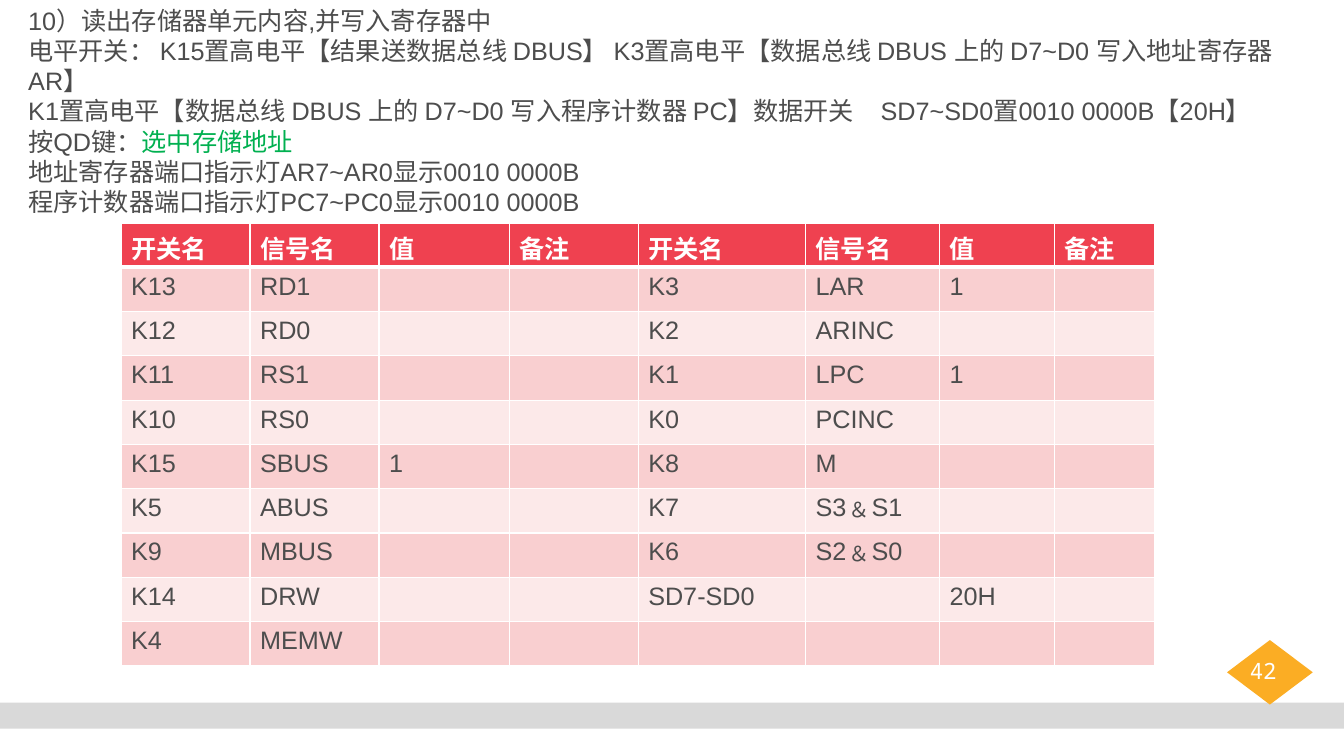
from dataclasses import dataclass
from typing import NamedTuple

from lxml import etree
from pptx import Presentation
from pptx.dml.color import RGBColor
from pptx.enum import shapes, text
from pptx.oxml import ns
from pptx.util import Inches, Pt


@dataclass(frozen=True)
class Theme:
    ink: RGBColor = RGBColor(0x4D, 0x4D, 0x4D)
    white: RGBColor = RGBColor(0xFF, 0xFF, 0xFF)
    green: RGBColor = RGBColor(0x00, 0xB0, 0x50)
    header: RGBColor = RGBColor(0xEF, 0x41, 0x50)
    band_dark: RGBColor = RGBColor(0xF9, 0xCF, 0xD0)
    band_light: RGBColor = RGBColor(0xFC, 0xE9, 0xE9)
    bar: RGBColor = RGBColor(0xD9, 0xD9, 0xD9)
    badge: RGBColor = RGBColor(0xFB, 0xAD, 0x24)
    font: str = "Arial"
    number_font: str = "Noto Sans Mono"
    text_size: int = 18
    number_size: int = 16


THEME = Theme()


class Span(NamedTuple):
    words: str
    color: RGBColor = THEME.ink
    spacing: int = 0  # extra points after each letter


class Area(NamedTuple):
    left: float
    top: float
    width: float
    height: float

    def lengths(self) -> list:
        return [Inches(value) for value in self]


class Decoration(NamedTuple):
    kind: shapes.MSO_SHAPE
    area: Area
    color: RGBColor


STEPS = [
    [Span("10）读出存储器单元内容,并写入寄存器中")],
    [Span("电平开关： K15置高电平【结果送数据总线 DBUS】 K3置高电平"
          "【数据总线 DBUS 上的 D7~D0 写入地址寄存器 AR】")],
    [Span("K1置高电平【数据总线 DBUS 上的 D7~D0 写入程序计数器 PC】数据开关"),
     Span(" ", spacing=15),
     Span("SD7~SD0置0010 0000B【20H】")],
    [Span("按QD键："), Span("选中存储地址", THEME.green)],
    [Span("地址寄存器端口指示灯AR7~AR0显示0010 0000B")],
    [Span("程序计数器端口指示灯PC7~PC0显示0010 0000B")],
]
STEPS_AREA = Area(0.18, 0, 13.15, 1.92)

HEADINGS = ["开关名", "信号名", "值", "备注"] * 2
SWITCHES = [
    ["K13", "RD1", "", "", "K3", "LAR", "1", ""],
    ["K12", "RD0", "", "", "K2", "ARINC", "", ""],
    ["K11", "RS1", "", "", "K1", "LPC", "1", ""],
    ["K10", "RS0", "", "", "K0", "PCINC", "", ""],
    ["K15", "SBUS", "1", "", "K8", "M", "", ""],
    ["K5", "ABUS", "", "", "K7", "S3﹠S1", "", ""],
    ["K9", "MBUS", "", "", "K6", "S2﹠S0", "", ""],
    ["K14", "DRW", "", "", "SD7-SD0", "", "20H", ""],
    ["K4", "MEMW", "", "", "", "", "", ""],
]
TABLE_AREA = Area(1.2, 2.22, 10.25, 4.38)
COLUMN_WIDTHS = [1.28, 1.28, 1.29, 1.28, 1.66, 1.33, 1.14, 0.99]
HEADER_HEIGHT, ROW_HEIGHT = 0.43, 0.44

DECORATIONS = [
    Decoration(shapes.MSO_SHAPE.RECTANGLE, Area(0, 6.97, 13.33, 0.26), THEME.bar),
    Decoration(shapes.MSO_SHAPE.FLOWCHART_DECISION, Area(12.17, 6.35, 0.85, 0.64), THEME.badge),
]
NUMBER_AREA = Area(12.18, 6.47, 0.7, 0.37)


def add_span(para, span: Span, font: str = THEME.font,
             size: int = THEME.text_size, bold: bool = False) -> None:
    run = para.add_run()
    run.text = span.words
    run.font.name = font
    run.font.size = Pt(size)
    run.font.bold = bold
    run.font.color.rgb = span.color
    if span.spacing:
        run._r.get_or_add_rPr().set("spc", str(span.spacing * 100))


def clear_bullet(para) -> None:
    """Turn a list paragraph into plain text."""
    properties = para._p.get_or_add_pPr()
    properties.set("marL", "0")
    properties.set("indent", "0")
    etree.SubElement(properties, ns.qn("a:buNone"))


def fill_steps(box) -> None:
    box.left, box.top, box.width, box.height = STEPS_AREA.lengths()
    frame = box.text_frame
    frame.word_wrap = True
    frame.auto_size = text.MSO_AUTO_SIZE.NONE
    frame.vertical_anchor = text.MSO_ANCHOR.TOP
    for index, spans in enumerate(STEPS):
        para = frame.add_paragraph() if index else frame.paragraphs[0]
        clear_bullet(para)
        para.space_before = Pt(0)
        para.alignment = text.PP_ALIGN.LEFT
        for span in spans:
            add_span(para, span)


def add_decoration(page, item: Decoration) -> None:
    shape = page.shapes.add_shape(item.kind, *item.area.lengths())
    shape.shadow.inherit = False
    shape.fill.solid()
    shape.fill.fore_color.rgb = item.color
    shape.line.fill.background()


def add_page_number(page, number: str) -> None:
    box = page.shapes.add_textbox(*NUMBER_AREA.lengths())
    box.text_frame.word_wrap = True
    para = box.text_frame.paragraphs[0]
    para.alignment = text.PP_ALIGN.CENTER
    add_span(para, Span(number, THEME.white), THEME.number_font, THEME.number_size)


def underline_cell(cell, color: RGBColor, points: int) -> None:
    border = etree.Element(ns.qn("a:lnB"), w=str(Pt(points)))
    fill = etree.SubElement(border, ns.qn("a:solidFill"))
    etree.SubElement(fill, ns.qn("a:srgbClr"), val=str(color))
    cell._tc.get_or_add_tcPr().insert(0, border)


def add_switch_table(page) -> None:
    rows = [HEADINGS, *SWITCHES]
    table = page.shapes.add_table(len(rows), len(HEADINGS), *TABLE_AREA.lengths()).table
    for column, width in zip(table.columns, COLUMN_WIDTHS):
        column.width = Inches(width)
    for row_index, row in enumerate(rows):
        is_header = row_index == 0
        table.rows[row_index].height = Inches(HEADER_HEIGHT if is_header else ROW_HEIGHT)
        band = THEME.band_dark if row_index % 2 else THEME.band_light
        for column_index, words in enumerate(row):
            cell = table.cell(row_index, column_index)
            cell.fill.solid()
            cell.fill.fore_color.rgb = THEME.header if is_header else band
            if is_header:
                underline_cell(cell, THEME.white, 3)
            if words:
                color = THEME.white if is_header else THEME.ink
                add_span(cell.text_frame.paragraphs[0], Span(words, color), bold=is_header)


def main() -> None:
    deck = Presentation()
    deck.slide_width, deck.slide_height = Inches(13.33), Inches(7.5)
    page = deck.slides.add_slide(deck.slide_layouts.get_by_name("Title and Content"))
    title = page.shapes.title.element
    title.getparent().remove(title)
    fill_steps(page.placeholders[1])
    for item in DECORATIONS:
        add_decoration(page, item)
    add_page_number(page, "42")
    add_switch_table(page)
    deck.save("out.pptx")


if __name__ == "__main__":
    main()
